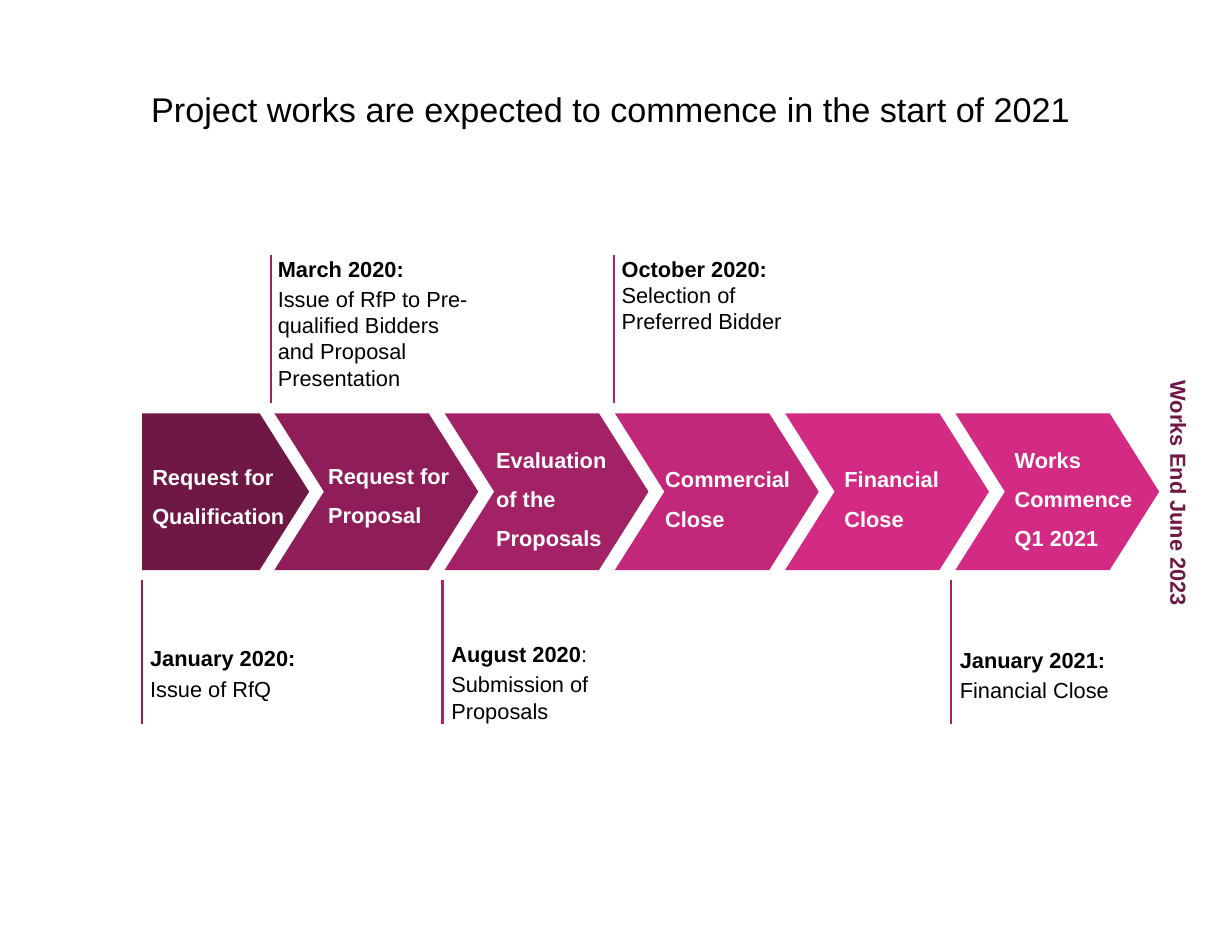
import pptx
import pptx.util
import pptx.dml.color
import pptx.enum.shapes
import pptx.enum.text
from lxml import etree

Inches, Pt = pptx.util.Inches, pptx.util.Pt
SHAPE = pptx.enum.shapes.MSO_SHAPE
ANCHOR = pptx.enum.text.MSO_ANCHOR

# Content
TITLE = "Project works are expected to commence in the start of 2021"
WORKS_END = "Works End June 2023"
PLUM, BERRY = "6F1745", "AA2269"

# Stage: label, fill, label box (left, top, width, height)
STAGES = [
    ("Request for Qualification", PLUM, (1.28, 3.96, 1.5, 0.83)),
    ("Request for Proposal", "8F1D59", (2.85, 3.95, 1.37, 0.83)),
    ("Evaluation of the Proposals", "A32165", (4.35, 3.78, 1.21, 1.23)),
    ("Commercial Close", "C32779", (5.86, 3.98, 1.37, 0.83)),
    ("Financial Close", "D32B83", (7.46, 3.98, 1.37, 0.83)),
    ("Works Commence Q1 2021", "D32B83", (8.98, 3.78, 1.37, 1.23)),
]

# Milestone: marker x, above the stages, marker colour, text box, left inset,
# anchor, paragraphs of (text, bold) runs
MILESTONES = [
    (1.27, False, "8F1D59", (1.27, 5.76, 1.73, 0.69), 0.07, ANCHOR.TOP,
     [[("January 2020:", True)], [("Issue of RfQ", False)]]),
    (2.42, True, "A32165", (2.48, 2.28, 1.71, 1.05), 0, ANCHOR.TOP,
     [[("March 2020:", True)],
      [("Issue of RfP to Pre-qualified Bidders and Proposal Presentation", False)]]),
    (3.95, False, BERRY, (3.96, 5.78, 1.72, 0.68), 0.07, ANCHOR.BOTTOM,
     [[("August 2020", True), (":", False)], [("Submission of Proposals", False)]]),
    (5.48, True, BERRY, (5.48, 2.28, 1.87, 1.04), 0.07, ANCHOR.TOP,
     [[("October 2020: ", True), ("Selection of Preferred Bidder", False)]]),
    (8.49, False, BERRY, (8.5, 5.77, 1.73, 0.68), 0.07, ANCHOR.TOP,
     [[("January 2021:", True)], [("Financial Close", False)]]),
]

# Layout
STAGE_TOP, STAGE_HEIGHT = 3.69, 1.4
FIRST_LEFT, FIRST_WIDTH = 1.27, 1.49
CHEVRON_LEFT, CHEVRON_WIDTH, CHEVRON_PITCH = 2.45, 1.82, 1.52
MARKER_ABOVE, MARKER_BELOW = (3.6, 2.28), (6.46, 5.18)


def rgb(color):
    return pptx.dml.color.RGBColor.from_string(color)


def add_run(paragraph, text, size, color, bold):
    run = paragraph.add_run()
    run.text = text
    run.font.name = "Arial"
    run.font.size = Pt(size)
    run.font.bold = bold
    run.font.color.rgb = rgb(color)


def add_text(slide, box, insets, anchor, paragraphs, color, spacing=1.0):
    holder = slide.shapes.add_textbox(*map(Inches, box))
    frame = holder.text_frame
    frame.word_wrap = True
    frame.vertical_anchor = anchor
    (frame.margin_left, frame.margin_top,
     frame.margin_right, frame.margin_bottom) = map(Inches, insets)
    for i, runs in enumerate(paragraphs):
        paragraph = frame.add_paragraph() if i else frame.paragraphs[0]
        paragraph.line_spacing = spacing
        if i:
            paragraph.space_before = Pt(2.8)
        for text, bold in runs:
            add_run(paragraph, text, 14, color, bold)
    return holder


def add_stage(slide, index, fill):
    if index:
        preset, left, width = SHAPE.CHEVRON, CHEVRON_LEFT + (index - 1) * CHEVRON_PITCH, CHEVRON_WIDTH
    else:
        preset, left, width = SHAPE.PENTAGON, FIRST_LEFT, FIRST_WIDTH
    arrow = slide.shapes.add_shape(
        preset, Inches(left), Inches(STAGE_TOP), Inches(width), Inches(STAGE_HEIGHT))
    arrow.adjustments[0] = 0.316
    arrow.shadow.inherit = False
    arrow.fill.solid()
    arrow.fill.fore_color.rgb = rgb(fill)
    arrow.line.fill.background()


def add_marker(slide, x, above, color):
    start, end = MARKER_ABOVE if above else MARKER_BELOW
    marker = slide.shapes.add_connector(
        pptx.enum.shapes.MSO_CONNECTOR.STRAIGHT,
        Inches(x), Inches(start), Inches(x), Inches(end))
    marker.line.color.rgb = rgb(color)
    marker.line.width = Pt(1.5)
    etree.SubElement(marker.element.spPr, pptx.oxml.ns.qn("a:effectLst"))


def main():
    deck = pptx.Presentation()
    deck.slide_width, deck.slide_height = Inches(11), Inches(8.5)
    slide = deck.slides.add_slide(deck.slide_layouts[5])

    # Title
    title = slide.shapes.title
    title.left, title.top, title.width, title.height = map(Inches, (1.25, 0.78, 8.43, 0.77))
    title.text_frame.vertical_anchor = ANCHOR.TOP
    heading = title.text_frame.paragraphs[0]
    heading.alignment = pptx.enum.text.PP_ALIGN.LEFT
    heading.line_spacing = 0.9
    add_run(heading, TITLE, 22, "000000", False)

    # Stage arrows and their labels
    for index, (label, fill, box) in enumerate(STAGES):
        add_stage(slide, index, fill)
        add_text(slide, box, (0.08, 0.08, 0.07, 0.08), ANCHOR.MIDDLE,
                 [[(label, True)]], "FFFFFF", 1.5)

    # Dated milestones
    for x, above, color, box, inset, anchor, paragraphs in MILESTONES:
        add_marker(slide, x, above, color)
        add_text(slide, box, (inset, 0, 0, 0), anchor, paragraphs, "000000")

    # Vertical closing note
    works_end = add_text(slide, (9.25, 4.42, 2.67, 0.47), (0.08,) * 4, ANCHOR.MIDDLE,
                         [[(WORKS_END, True)]], PLUM, 1.5)
    works_end.rotation = 90

    deck.save("out.pptx")


if __name__ == "__main__":
    main()
